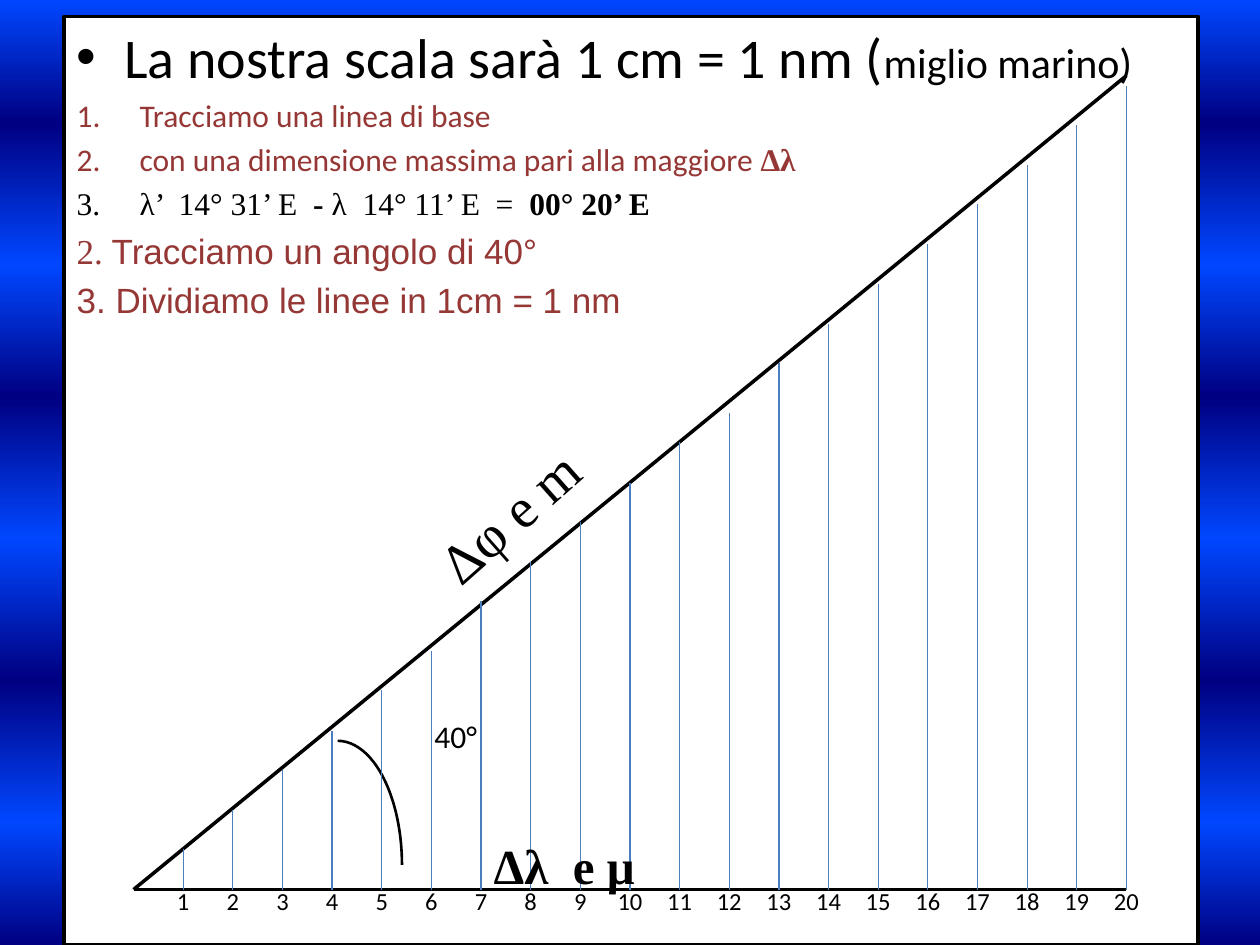
"""Build the slide that draws a nautical scale from a 40° angle."""
import pptx
import pptx.util
import pptx.dml.color
import pptx.enum.shapes
import pptx.enum.text
import pptx.oxml
import pptx.oxml.ns
from pptx.util import Inches

COLORS = {"ink": "000000", "paper": "FFFFFF", "red": "953735",
          "blue": "4B7EBC", "navy": "000082", "bright": "0047FF"}
NS = pptx.oxml.ns.nsdecls("a")


class Builder:
    """Hold the style and the current slide."""

    def __init__(self, slide, font="Calibri"):
        self.slide = slide
        self.font = font

    def color(self, name):
        return pptx.dml.color.RGBColor.from_string(COLORS[name])

    def background(self, positions, names):
        self.slide.background.fill.gradient()
        grad = self.slide.background._cSld.bg.bgPr.find(pptx.oxml.ns.qn("a:gradFill"))
        stops = "".join(
            f'<a:gs pos="{pos * 1000}"><a:srgbClr val="{COLORS[names[i % 2]]}"/></a:gs>'
            for i, pos in enumerate(positions))
        grad.getparent().replace(grad, pptx.oxml.parse_xml(
            f'<a:gradFill {NS} rotWithShape="1"><a:gsLst>{stops}</a:gsLst>'
            '<a:lin ang="16200000" scaled="0"/></a:gradFill>'))

    def shape(self, kind, box, width, fill=None):
        sp = self.slide.shapes.add_shape(kind, *map(Inches, box))
        sp.shadow.inherit = False
        if fill:
            sp.fill.solid()
            sp.fill.fore_color.rgb = self.color(fill)
        else:
            sp.fill.background()
        sp.line.color.rgb = self.color("ink")
        sp.line.width = pptx.util.Pt(width)
        return sp

    def line(self, start, end, color="ink", width=2):
        cx = self.slide.shapes.add_connector(
            pptx.enum.shapes.MSO_CONNECTOR.STRAIGHT, *map(Inches, start + end))
        cx.line.color.rgb = self.color(color)
        cx.line.width = pptx.util.Pt(width)
        cx._element.spPr.append(pptx.oxml.parse_xml(f"<a:effectLst {NS}/>"))

    def run(self, p, text, size, color="ink", font=None, bold=False):
        r = p.add_run()
        r.text = text
        r.font.size = pptx.util.Pt(size)
        r.font.name = font or self.font
        r.font.bold = bold
        r.font.color.rgb = self.color(color)

    def label(self, box, text, size, font=None, bold=False, rotation=0):
        sp = self.slide.shapes.add_textbox(*map(Inches, box))
        sp.rotation = rotation
        sp.text_frame.word_wrap = True
        self.run(sp.text_frame.paragraphs[0], text, size, font=font, bold=bold)
        return sp

    def scale(self, box, step, count):
        text = "".join(f"\t{i}" for i in range(1, count + 1))
        sp = self.label(box, text, 14)
        sp.text_frame.margin_left = 0
        tabs = "".join(f'<a:tab pos="{Inches(i * step)}" algn="ctr"/>'
                       for i in range(1, count + 1))
        pPr = sp.text_frame.paragraphs[0]._p.get_or_add_pPr()
        pPr.append(pptx.oxml.parse_xml(f"<a:tabLst {NS}>{tabs}</a:tabLst>"))

    def item(self, p, indent, bullet, runs):
        p.alignment = pptx.enum.text.PP_ALIGN.LEFT
        p.space_before = pptx.util.Pt(runs[0][1] * 0.2)
        pPr = p._p.get_or_add_pPr()
        pPr.set("marL", str(Inches(indent)))
        pPr.set("indent", str(-Inches(indent)))
        for tag in bullet:
            pPr.append(pptx.oxml.parse_xml(tag))
        for args in runs:
            self.run(p, *args)


def main():
    prs = pptx.Presentation()
    prs.slide_width, prs.slide_height = Inches(10), Inches(7.5)
    s = Builder(prs.slides.add_slide(prs.slide_layouts[6]))
    s.background((0, 13, 28, 43, 58, 72, 87, 100), ("navy", "bright"))

    serif = "Times New Roman"
    dot = [f'<a:buFont {NS} typeface="Arial"/>', f'<a:buChar {NS} char="•"/>']
    number = [f'<a:buFont {NS} typeface="+mj-lt"/>',
              f'<a:buAutoNum {NS} type="arabicPeriod"/>']
    plain = [f"<a:buNone {NS}/>"]
    items = [
        (0.38, dot, [("La nostra scala sarà 1 cm = 1 nm (", 32),
                     ("miglio marino)", 24)]),
        (0.5, number, [("Tracciamo una linea di base", 18, "red")]),
        (0.5, number, [("con una dimensione massima pari alla maggiore ", 18, "red"),
                       ("Δλ", 18, "red", serif, True)]),
        (0.5, number, [("λ’  14° 31’ E ", 18, "ink", serif),
                       (" - ", 18, "ink", serif, True),
                       ("λ  14° 11’ E  = ", 18, "ink", serif),
                       (" 00° 20’ E", 18, "ink", serif, True)]),
        (0.5, plain, [("2. ", 20, "red", serif),
                      ("Tracciamo un angolo di 40°", 20, "red", "Arial")]),
        (0.5, plain, [("3. Dividiamo le linee in 1cm = 1 nm", 20, "red", "Arial")]),
    ]
    shapes = pptx.enum.shapes.MSO_SHAPE
    tf = s.shape(shapes.RECTANGLE, (0.51, 0.13, 9, 7.37), 2, "paper").text_frame
    tf.word_wrap = True
    tf.vertical_anchor = pptx.enum.text.MSO_ANCHOR.TOP
    for i, entry in enumerate(items):
        s.item(tf.add_paragraph() if i else tf.paragraphs[0], *entry)

    left, base, right, count = 1.06, 7.06, 8.94, 20
    step = (right - left) / count
    s.line((left, base), (right, base))
    s.line((left, base), (right, 0.6))
    s.shape(shapes.ARC, (2.17, 5.88, 1.02, 1.97), 1.5)
    s.label((3.35, 5.64, 0.94, 0.4), "40°", 18)

    tops = (6.74, 6.43, 6.11, 5.8, 5.48, 5.17, 4.77, 4.46, 4.14, 3.83,
            3.51, 3.28, 2.88, 2.57, 2.25, 1.94, 1.62, 1.31, 0.99, 0.68)
    for i, top in enumerate(tops, 1):
        x = left + i * step
        s.line((x, base), (x, top), "blue", 0.75)
    s.scale((left, 6.98, 8.19, 0.34), step, count)

    s.label((3.06, 3.18, 3.31, 0.64), "Δφ e m", 32, serif, rotation=318.5)
    s.label((3.82, 6.58, 3.46, 0.57), "Δλ  e μ", 28, serif, True)
    prs.save("out.pptx")


if __name__ == "__main__":
    main()
